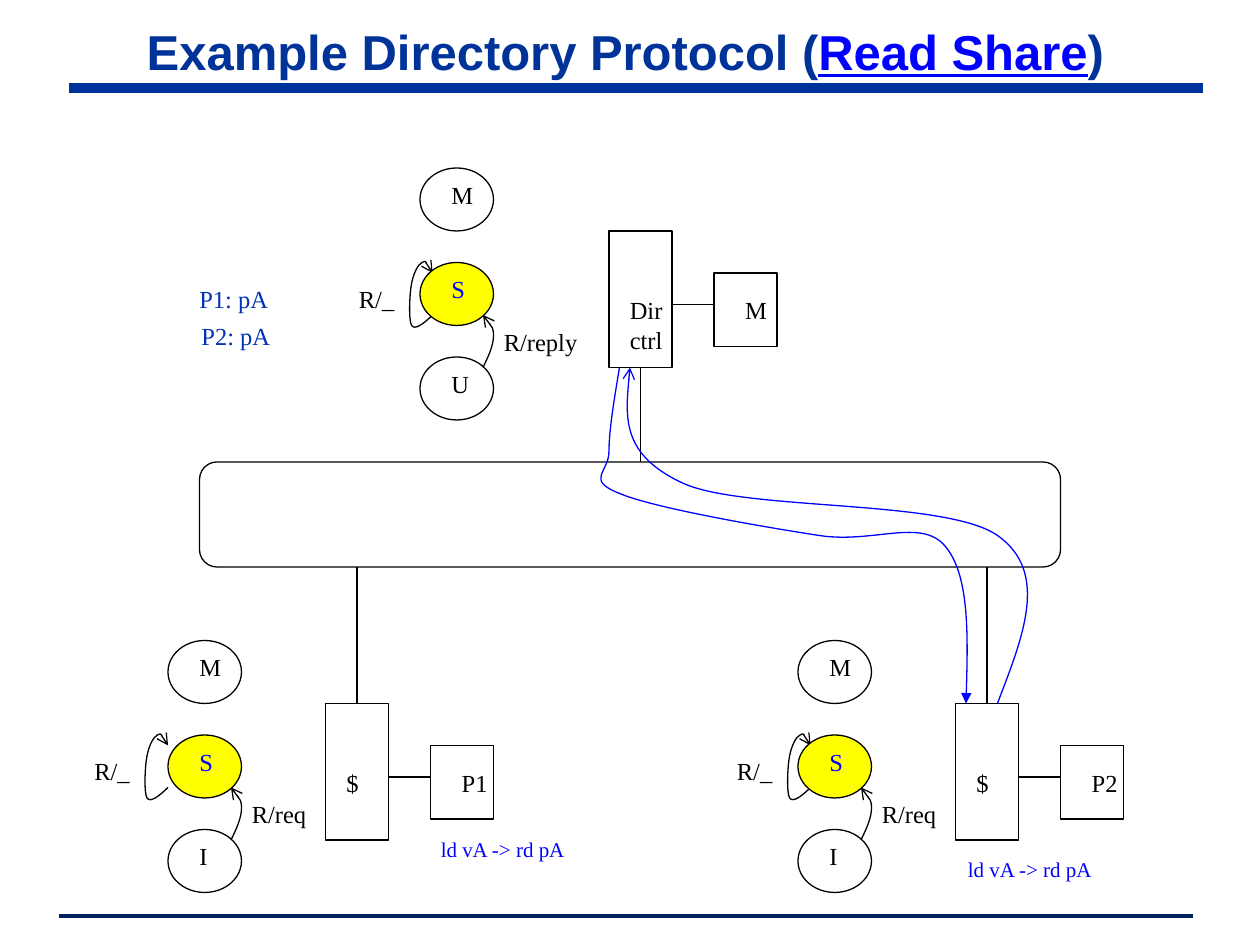
from lxml.etree import SubElement as Sub
from pptx import Presentation as Deck
from pptx.dml.color import RGBColor as Rgb
from pptx.enum.shapes import MSO_CONNECTOR as Link, MSO_SHAPE as Kind
from pptx.enum.text import MSO_ANCHOR as Anchor, MSO_AUTO_SIZE as Fit, PP_ALIGN as Align
from pptx.oxml.ns import qn
from pptx.util import Cm, Pt

HUES = {
    "black": "000000", "blue": "0000FF", "yellow": "FFFF00",
    "navy": "003399", "deep": "002060", "royal": "0332B7",
}
WIDTHS = {
    "M": 4.3, "S": 4, "I": 3.1, "U": 4.1, "P1": 5.3, "P2": 5.3, "$": 3.7,
    "Dir\nctrl": 5.5, "R/reply": 9.8, "R/req": 8.2, "R/_": 6.1,
    "P1: pA": 9.5, "P2: pA": 9.5, "ld vA -> rd pA": 14.6,
}
RISE = [(6, 19), (6.5, 18), (7, 16.9), (7, 16), (7, 15.2), (6.5, 14.6), (6, 14)]
LOOP = [
    (0, 14), (-0.8, 14.8), (-1.7, 15.5), (-2, 15), (-2.3, 14.5), (-2.2, 12), (-2, 11),
    (-1.8, 10), (-1.4, 9.2), (-1, 9), (-0.6, 8.8), (-0.3, 9.4), (0, 10),
]
ASK = [
    (95, 67), (97.4, 60.7), (100, 54.5), (95, 51), (90, 47.5), (70.8, 48.7), (65, 46),
    (59.2, 43.3), (59.6, 39.1), (60, 35),
]
REPLY = [
    (59, 35), (58.5, 38), (58, 41), (58, 43), (58, 45), (55.7, 45.7), (59, 47),
    (62.3, 48.4), (72.8, 50.2), (78, 51), (83.2, 51.8), (87.7, 49.3), (90, 52),
    (92.3, 54.7), (92.2, 60.8), (92, 67),
]


def grid(n):
    return Cm(n * 25.4 / 120)


def hue(name):
    return Rgb.from_string(HUES[name])


def write(para, text, size=14, font="Times New Roman", color="black", bold=False, under=False):
    run = para.add_run()
    run.text = text
    run.font.size = Pt(size)
    run.font.name = font
    run.font.bold = bold
    run.font.underline = under
    run.font.color.rgb = hue(color)


class Board:
    def __init__(self, slide, weight=0.75):
        self.slide = slide
        self.shapes = slide.shapes
        self.weight = weight

    def stroke(self, shape, color="black", weight=None):
        shape.line.color.rgb = hue(color)
        shape.line.width = Pt(weight or self.weight)

    def title(self, parts):
        box = self.shapes.add_textbox(grid(9.2), 0, grid(100.7), grid(9.7))
        frame = box.text_frame
        frame.word_wrap = True
        frame.vertical_anchor = Anchor.MIDDLE
        para = frame.paragraphs[0]
        para.alignment = Align.CENTER
        for text, look in parts:
            write(para, text, size=28, font="Arial", bold=True, **look)

    def label(self, x, y, text, **look):
        rows = text.split("\n")
        box = self.shapes.add_textbox(grid(x), grid(y), grid(WIDTHS[text]), grid(0.6 + 2.8 * len(rows)))
        frame = box.text_frame
        frame.word_wrap = False
        frame.auto_size = Fit.SHAPE_TO_FIT_TEXT
        frame.margin_left = frame.margin_right = Cm(0.25)
        frame.margin_top = Cm(0.13)
        frame.margin_bottom = 0
        for i, row in enumerate(rows):
            write(frame.add_paragraph() if i else frame.paragraphs[0], row, **look)

    def block(self, kind, x, y, w, h, fill=None):
        shape = self.shapes.add_shape(kind, grid(x), grid(y), grid(w), grid(h))
        shape.shadow.inherit = False
        if fill:
            shape.fill.solid()
            shape.fill.fore_color.rgb = hue(fill)
        else:
            shape.fill.background()
        self.stroke(shape)

    def line(self, x1, y1, x2, y2, **look):
        wire = self.shapes.add_connector(Link.STRAIGHT, grid(x1), grid(y1), grid(x2), grid(y2))
        self.stroke(wire, **look)
        Sub(wire.element.spPr, qn("a:effectLst"))

    def curve(self, spots, x=0, y=0, head="arrow", color="black"):
        spots = [(grid(x + a), grid(y + b)) for a, b in spots]
        form = self.shapes.build_freeform(*spots[0])
        form.add_line_segments(spots[1:], close=False)
        shape = form.convert_to_shape()
        shape.shadow.inherit = False
        shape.fill.background()
        self.stroke(shape, color)
        Sub(shape.element.find(".//" + qn("a:ln")), qn("a:tailEnd"), type=head)
        track = shape.element.find(".//" + qn("a:path"))
        steps = track.findall(qn("a:lnTo"))
        for i in range(0, len(steps), 3):
            bend = Sub(track, qn("a:cubicBezTo"))
            for step in steps[i:i + 3]:
                bend.append(step[0])
                track.remove(step)

    def states(self, x, y, base, cause, shift):
        self.curve(RISE, x, y)
        self.label(x + 6.8, y + 14.5, cause)
        self.curve(LOOP, x + shift, y)
        self.label(x + shift - 8.2, y + 10.4, "R/_")
        looks = [("M", None, "black"), ("S", "yellow", "blue"), (base, None, "black")]
        for i, (name, fill, color) in enumerate(looks):
            top = y + 9 * i
            self.block(Kind.OVAL, x, top, 7, 6, fill)
            self.label(x + 1.8, top + 0.5, name, color=color)

    def node(self, x, y, name, peer, start, end):
        self.block(Kind.RECTANGLE, x, y, 6, 13)
        self.label(x + 0.8, y + 5.5, name)
        self.block(Kind.RECTANGLE, x + 10, y + 4, 6, 7)
        self.label(x + 11.8, y + 5.5, peer)
        self.line(x + 10, y + 7, x + 6, y + 7)
        self.line(x + 3, start, x + 3, end)


def main():
    deck = Deck()
    deck.slide_width, deck.slide_height = Cm(25.4), Cm(19.05)
    board = Board(deck.slides.add_slide(deck.slide_layouts[6]))

    board.line(5.6, 87.2, 113.6, 87.2, color="deep", weight=2.25)
    board.line(6.6, 8.4, 114.6, 8.4, color="navy", weight=6)
    board.title([
        ("Example Directory Protocol (", {"color": "navy"}),
        ("Read Share", {"color": "blue", "under": True}),
        (")", {"color": "navy"}),
    ])

    board.block(Kind.ROUNDED_RECTANGLE, 19, 44, 82, 10)
    board.node(58, 22, "Dir\nctrl", "M", 44, 35)
    board.states(40, 16, "U", "R/reply", 1.2)
    for x, peer, shift in [(16, "P1", 0), (76, "P2", 1.2)]:
        board.node(x + 15, 67, "$", peer, 67, 54)
        board.states(x, 61, "I", "R/req", shift)

    for x, y, text in [(17.8, 26.4, "P1: pA"), (18, 30, "P2: pA")]:
        board.label(x, y, text, color="royal")
    for x, y in [(40.8, 79.1), (91, 81)]:
        board.label(x, y, "ld vA -> rd pA", size=12, color="blue")
    board.curve(ASK, color="blue")
    board.curve(REPLY, head="triangle", color="blue")
    deck.save("out.pptx")


if __name__ == "__main__":
    main()
